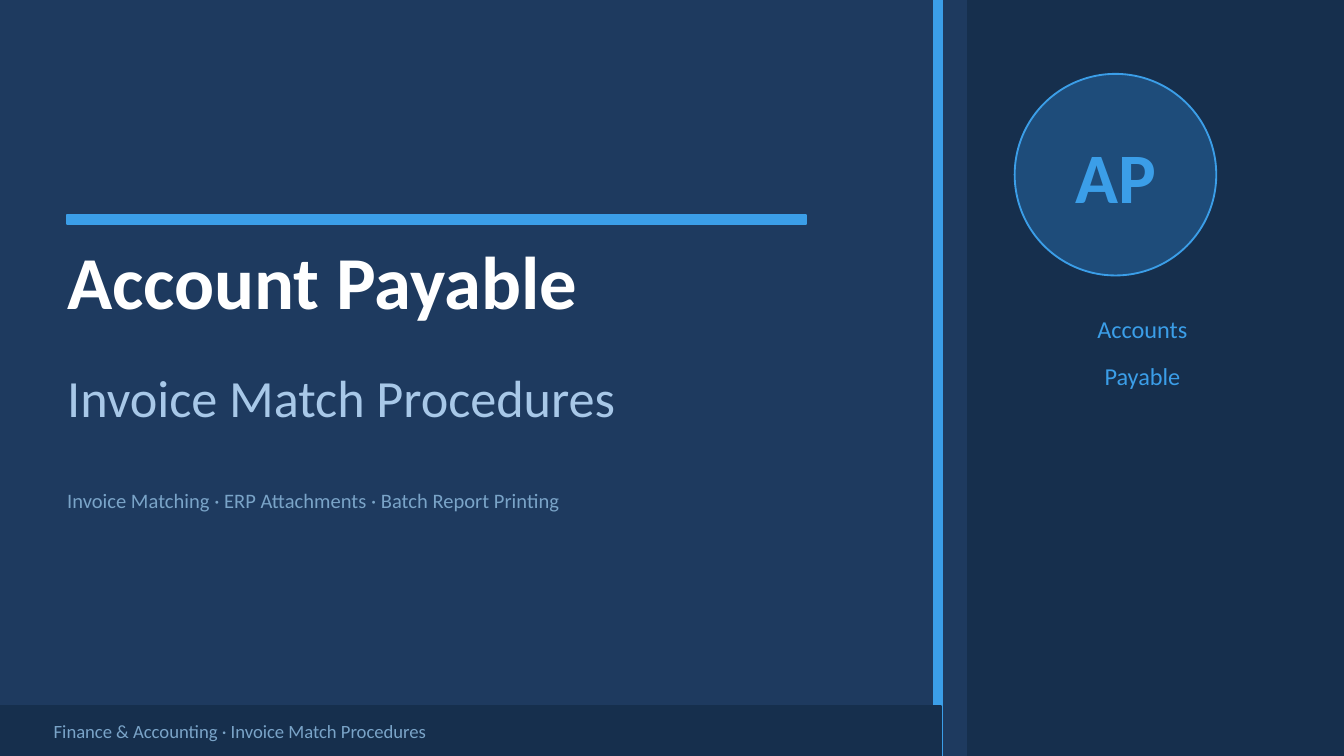
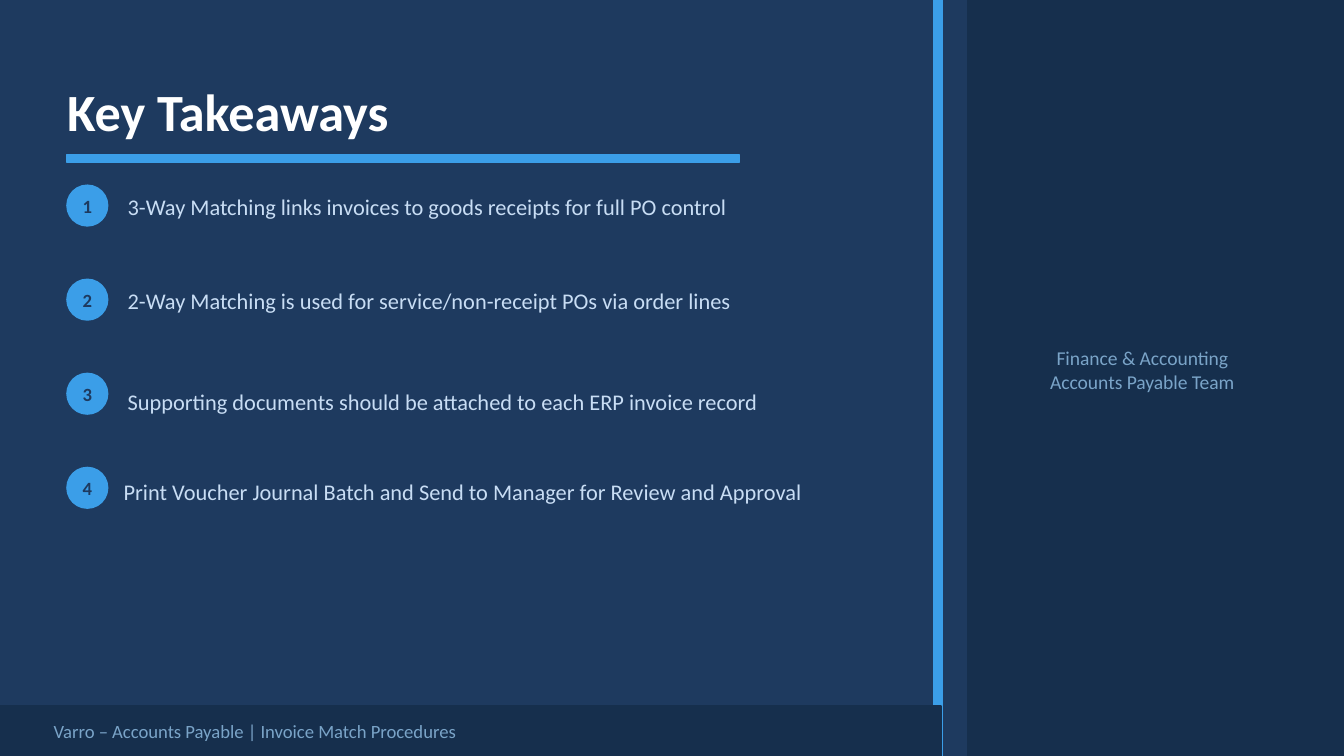
"""Build the cover and key takeaways slides of an invoice matching deck."""
from dataclasses import dataclass

import pptx
import pptx.dml.color
import pptx.enum.shapes
import pptx.enum.text
import pptx.presentation
import pptx.slide
import pptx.util

Inches = pptx.util.Inches
SHAPE = pptx.enum.shapes.MSO_SHAPE
ALIGN = pptx.enum.text.PP_ALIGN
ANCHOR = pptx.enum.text.MSO_ANCHOR

FONT = "Calibri"
WIDTH = 10
HEIGHT = WIDTH * 9 / 16
LEFT = 0.5
TEXT_WIDTH = 6.2
COLORS = {
    "navy": "1E3A5F",
    "panel": "162F4D",
    "accent": "3B9EE8",
    "badge": "1E4C7A",
    "white": "FFFFFF",
    "subtitle": "A8C8E8",
    "muted": "7AA4C8",
    "body": "C8DDF4",
}


@dataclass(frozen=True)
class Box:
    x: float
    y: float
    w: float
    h: float

    def lengths(self) -> tuple:
        return Inches(self.x), Inches(self.y), Inches(self.w), Inches(self.h)


@dataclass(frozen=True)
class Style:
    size: float
    color: str
    bold: bool = False
    centered: bool = False
    middle: bool = True


@dataclass(frozen=True)
class Takeaway:
    text: str
    x: float
    y: float


COVER_TITLE = Style(40, "white", bold=True, middle=False)
SUBTITLE = Style(28, "subtitle", middle=False)
TOPICS = Style(11, "muted")
TITLE = Style(28, "white", bold=True)
BODY = Style(12, "body")
NUMBER = Style(10, "navy", bold=True, centered=True)
INITIALS = Style(38, "accent", bold=True, centered=True)
PANEL_LABEL = Style(13, "accent", centered=True)
TEAM = Style(10.5, "muted", centered=True)
FOOTER = Style(10, "muted")

BADGE_TOP, BADGE_STEP, BADGE_SIZE = 1.38, 0.7, 0.3
TAKEAWAYS = [
    Takeaway("3-Way Matching links invoices to goods receipts for full PO control", 0.95, 1.36),
    Takeaway("2-Way Matching is used for service/non-receipt POs via order lines", 0.95, 2.06),
    Takeaway("Supporting documents should be attached to each ERP invoice record", 0.95, 2.81),
    Takeaway("Print Voucher Journal Batch and Send to Manager for Review and Approval", 0.92, 3.48),
]


def rgb(name: str) -> pptx.dml.color.RGBColor:
    return pptx.dml.color.RGBColor.from_string(COLORS[name])


def add_shape(s: pptx.slide.Slide, box: Box, fill: str, line: str = "",
              kind: SHAPE = SHAPE.RECTANGLE) -> None:
    sp = s.shapes.add_shape(kind, *box.lengths())
    sp.shadow.inherit = False
    sp.fill.solid()
    sp.fill.fore_color.rgb = rgb(fill)
    sp.line.color.rgb = rgb(line or fill)
    sp.line.width = pptx.util.Pt(1)


def add_text(s: pptx.slide.Slide, box: Box, style: Style, *lines: str) -> None:
    tf = s.shapes.add_textbox(*box.lengths()).text_frame
    tf.word_wrap = True
    tf.margin_left = tf.margin_top = tf.margin_right = tf.margin_bottom = 0
    tf.vertical_anchor = ANCHOR.MIDDLE if style.middle else ANCHOR.TOP
    for i, line in enumerate(lines):
        p = tf.add_paragraph() if i else tf.paragraphs[0]
        p.alignment = ALIGN.CENTER if style.centered else ALIGN.LEFT
        r = p.add_run()
        r.text = line
        r.font.name = FONT
        r.font.size = pptx.util.Pt(style.size)
        r.font.bold = style.bold
        r.font.color.rgb = rgb(style.color)


def add_badge(s: pptx.slide.Slide, box: Box, label: str, style: Style, fill: str) -> None:
    add_shape(s, box, fill, "accent", SHAPE.OVAL)
    add_text(s, box, style, label)


def add_base(prs: pptx.presentation.Presentation) -> pptx.slide.Slide:
    s = prs.slides.add_slide(prs.slide_layouts[6])
    s.background.fill.solid()
    s.background.fill.fore_color.rgb = rgb("navy")
    add_shape(s, Box(7.2, 0, 2.8, HEIGHT), "panel")
    add_shape(s, Box(6.95, 0, 0.06, HEIGHT), "accent")
    return s


def add_footer(s: pptx.slide.Slide, text: str) -> None:
    top = 5.25
    add_shape(s, Box(0, top, 7, HEIGHT - top), "panel")
    add_text(s, Box(0.4, top, 6.4, HEIGHT - top), FOOTER, text)


def build_cover(prs: pptx.presentation.Presentation) -> None:
    s = add_base(prs)
    add_badge(s, Box(7.55, 0.55, 1.5, 1.5), "AP", INITIALS, "badge")
    for i, word in enumerate(("Accounts", "Payable")):
        add_text(s, Box(7.3, 2.25 + 0.35 * i, 2.4, 0.4), PANEL_LABEL, word)
    add_shape(s, Box(LEFT, 1.6, 5.5, 0.07), "accent")
    add_text(s, Box(LEFT, 1.75, TEXT_WIDTH, 1), COVER_TITLE, "Account Payable")
    add_text(s, Box(LEFT, 2.72, TEXT_WIDTH, 0.65), SUBTITLE, "Invoice Match Procedures")
    add_text(s, Box(LEFT, 3.5, TEXT_WIDTH, 0.45), TOPICS,
             "Invoice Matching · ERP Attachments · Batch Report Printing")
    add_footer(s, "Finance & Accounting · Invoice Match Procedures")


def build_takeaways(prs: pptx.presentation.Presentation) -> None:
    s = add_base(prs)
    add_text(s, Box(LEFT, 0.55, TEXT_WIDTH, 0.55), TITLE, "Key Takeaways")
    add_shape(s, Box(LEFT, 1.15, 5, 0.06), "accent")
    for i, item in enumerate(TAKEAWAYS):
        badge = Box(LEFT, BADGE_TOP + BADGE_STEP * i, BADGE_SIZE, BADGE_SIZE)
        add_badge(s, badge, str(i + 1), NUMBER, "accent")
        add_text(s, Box(item.x, item.y, 5.7, 0.35), BODY, item.text)
    add_text(s, Box(7.2, 2.4, 2.6, 0.7), TEAM,
             "Finance & Accounting", "Accounts Payable Team")
    add_footer(s, "Varro – Accounts Payable | Invoice Match Procedures")


def main() -> None:
    prs = pptx.Presentation()
    prs.slide_width, prs.slide_height = Inches(WIDTH), Inches(HEIGHT)
    build_cover(prs)
    build_takeaways(prs)
    prs.save("out.pptx")


if __name__ == "__main__":
    main()
